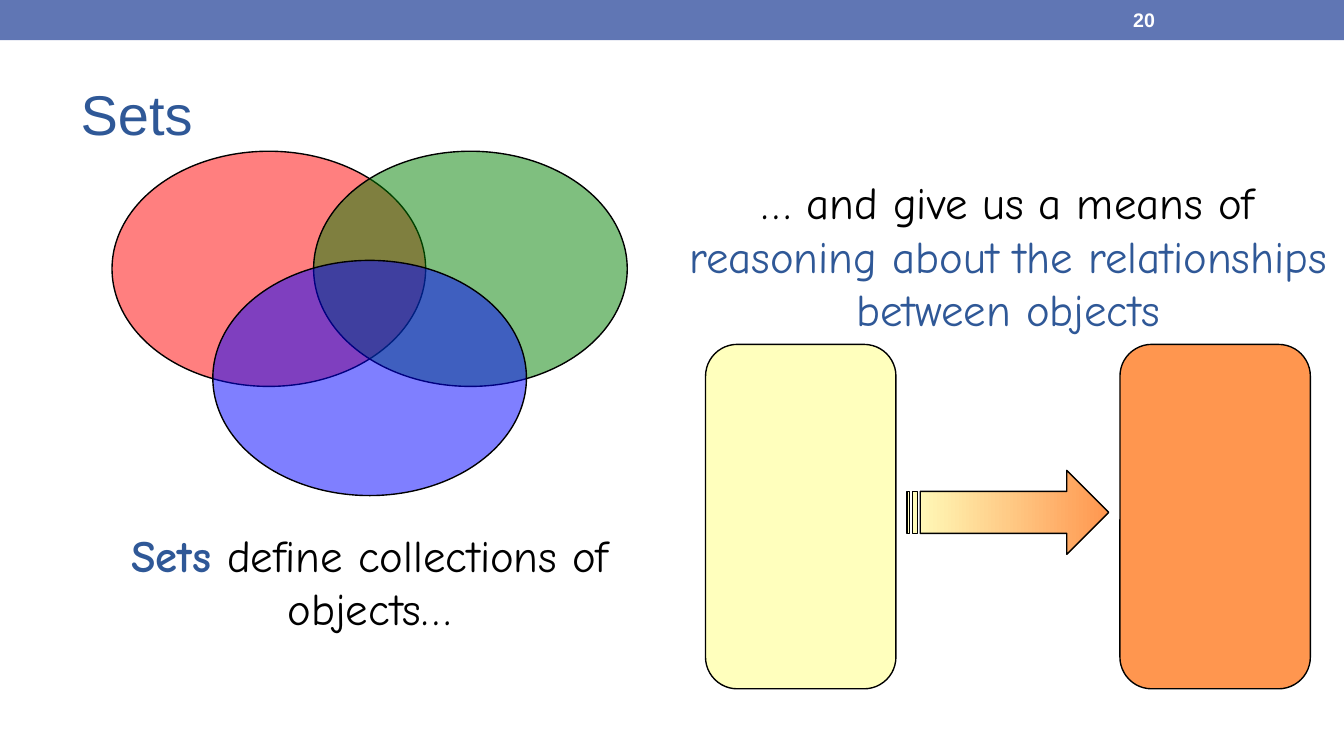
from dataclasses import dataclass

from lxml import etree
from pptx import Presentation
from pptx.dml.color import RGBColor
from pptx.enum.shapes import MSO_SHAPE
from pptx.enum.text import MSO_ANCHOR, PP_ALIGN
from pptx.oxml.ns import qn
from pptx.util import Inches, Pt

RECTANGLE = MSO_SHAPE.RECTANGLE
OVAL = MSO_SHAPE.OVAL
ROUNDED = MSO_SHAPE.ROUNDED_RECTANGLE
STRIPED_ARROW = MSO_SHAPE.STRIPED_RIGHT_ARROW
MIDDLE, TOP = MSO_ANCHOR.MIDDLE, MSO_ANCHOR.TOP
LEFT, CENTER = PP_ALIGN.LEFT, PP_ALIGN.CENTER
TITLE_ONLY = 5


@dataclass(frozen=True)
class Theme:
    band: str = "6076B4"
    accent: str = "2F5897"
    ink: str = "000000"
    paper: str = "FFFFFF"
    red: str = "FF0000"
    green: str = "008000"
    blue: str = "0000FF"
    yellow: str = "FFFFBD"
    orange: str = "FF964F"
    heading_font: str = "Arial"
    body_font: str = "Comic Neue"
    title_size: float = 30
    body_size: float = 24
    number_size: float = 10.5
    outline: float = 0.75


THEME = Theme()
WIDTH = Inches(10)
HEIGHT = WIDTH * 9 // 16
COLUMNS, ROWS = 120, 90


def rgb(color):
    return RGBColor.from_string(color)


def place(box):
    """Turn left, top, width and height in grid columns and rows into lengths."""
    left, top, width, height = box
    return (
        round(left * WIDTH / COLUMNS),
        round(top * HEIGHT / ROWS),
        round(width * WIDTH / COLUMNS),
        round(height * HEIGHT / ROWS),
    )


def add_shape(shapes, kind, box, color, outlined=True):
    shape = shapes.add_shape(kind, *place(box))
    shape.shadow.inherit = False
    shape.fill.solid()
    shape.fill.fore_color.rgb = rgb(color)
    if outlined:
        shape.line.color.rgb = rgb(THEME.ink)
        shape.line.width = Pt(THEME.outline)
    else:
        shape.line.fill.background()
    return shape


def set_opacity(shape, percent):
    color = next(shape.element.spPr.find(qn("a:solidFill")).iter(qn("a:srgbClr")))
    etree.SubElement(color, qn("a:alpha")).set("val", str(percent * 1000))


def set_gradient(shape, colors):
    """Blend the two colors from left to right."""
    shape.fill.gradient()
    shape.fill.gradient_angle = 0
    for position, (stop, color) in enumerate(zip(shape.fill.gradient_stops, colors)):
        stop.position = position
        stop.color.rgb = rgb(color)


def format_span(span, font, size, color, bold=False):
    span.font.name = font
    span.font.size = Pt(size)
    span.font.color.rgb = rgb(color)
    span.font.bold = bold


def add_text(shapes, box, spans, font, size, align=LEFT, anchor=TOP):
    """Write one paragraph from (text, color, bold) spans."""
    frame = shapes.add_textbox(*place(box)).text_frame
    frame.word_wrap = True
    frame.vertical_anchor = anchor
    para = frame.paragraphs[0]
    para.alignment = align
    for text, color, bold in spans:
        span = para.add_run()
        span.text = text
        format_span(span, font, size, color, bold)


def add_title(page, text):
    title = page.shapes.title
    title.left, title.top, title.width, title.height = place((6, 7, 108, 13))
    title.text_frame.text = text
    title.text_frame.vertical_anchor = MIDDLE
    para = title.text_frame.paragraphs[0]
    para.alignment = LEFT
    format_span(para.runs[0], THEME.heading_font, THEME.title_size, THEME.accent)


def add_venn_diagram(page):
    shapes = page.shapes.add_group_shape().shapes
    for left, top, color in (
        (10, 18, THEME.red),
        (28, 18, THEME.green),
        (19, 31, THEME.blue),
    ):
        set_opacity(add_shape(shapes, OVAL, (left, top, 28, 28), color), 50)
    spans = (
        ("Sets ", THEME.accent, True),
        ("define collections of objects…", THEME.ink, False),
    )
    add_text(shapes, (8, 62, 50, 14.5), spans,
             THEME.body_font, THEME.body_size, CENTER)


def add_relationship(page):
    shapes = page.shapes.add_group_shape().shapes
    colors = (THEME.yellow, THEME.orange)
    for left, color in zip((63, 100), colors):
        add_shape(shapes, ROUNDED, (left, 41, 17, 41), color)
    arrow = add_shape(shapes, STRIPED_ARROW, (81, 56, 18, 10), THEME.yellow)
    set_gradient(arrow, colors)
    spans = (
        ("… and give us a means of ", THEME.ink, False),
        ("reasoning about the relationships between objects", THEME.accent, False),
    )
    add_text(shapes, (60, 20, 60, 21), spans,
             THEME.body_font, THEME.body_size, CENTER)


def main():
    deck = Presentation()
    deck.slide_width, deck.slide_height = WIDTH, HEIGHT
    page = deck.slides.add_slide(deck.slide_layouts[TITLE_ONLY])
    add_shape(page.shapes, RECTANGLE, (0, 0, COLUMNS, 4.8), THEME.band, outlined=False)
    add_title(page, "Sets")
    add_venn_diagram(page)
    add_relationship(page)
    add_text(page.shapes, (100, 0.2, 14, 4.3), [("20", THEME.paper, True)],
             THEME.heading_font, THEME.number_size, anchor=MIDDLE)
    deck.save("out.pptx")


if __name__ == "__main__":
    main()
